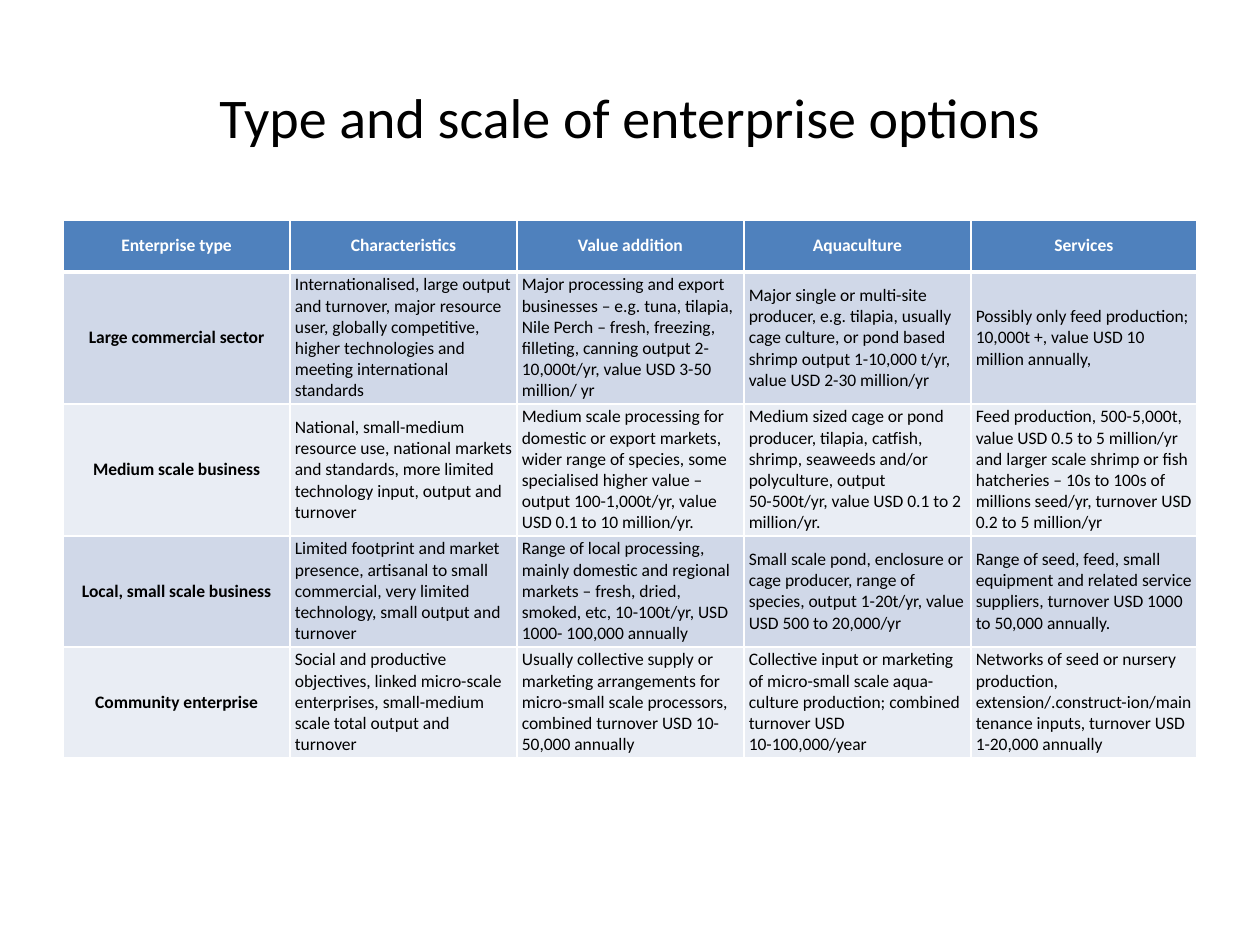
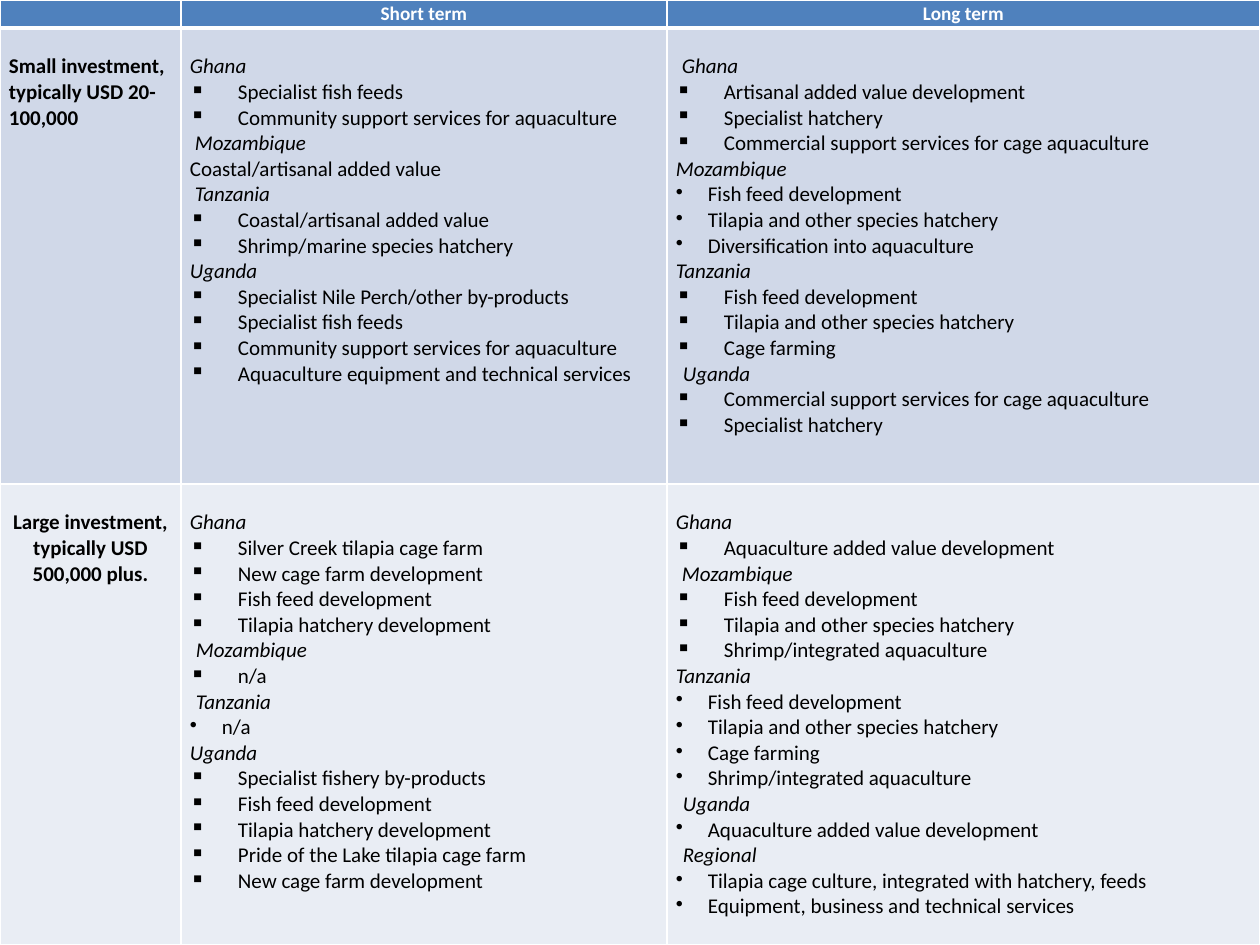
from lxml.etree import SubElement
from pptx import Presentation
from pptx.dml.color import RGBColor
from pptx.enum.text import MSO_ANCHOR as Anchor, PP_ALIGN as Align
from pptx.oxml.ns import qn
from pptx.util import Emu, Pt

PX = 914400 // 126
FONT = "Calibri"
BLACK = RGBColor(0x00, 0x00, 0x00)
WHITE = RGBColor(0xFF, 0xFF, 0xFF)
HEADER_BLUE = RGBColor(0x4F, 0x81, 0xBD)
BANDS = [RGBColor(0xD0, 0xD8, 0xE8), RGBColor(0xE9, 0xED, 0xF4)]

TITLE = "Type and scale of enterprise options"
ENTERPRISE_ROWS = [
    ["Enterprise type", "Characteristics", "Value addition", "Aquaculture", "Services"],
    ["Large commercial sector",
     "Internationalised, large output and turnover, major resource user, globally competitive, "
     "higher technologies and meeting international standards",
     "Major processing and export businesses – e.g. tuna, tilapia, Nile Perch – fresh, freezing, "
     "filleting, canning output 2-10,000t/yr, value USD 3-50 million/ yr",
     "Major single or multi-site producer, e.g. tilapia, usually cage culture, or pond based "
     "shrimp output 1-10,000 t/yr, value USD 2-30 million/yr",
     "Possibly only feed production; 10,000t +, value USD 10 million annually,"],
    ["Medium scale business",
     "National, small-medium resource use, national markets and standards, more limited "
     "technology input, output and turnover",
     "Medium scale processing for domestic or export markets, wider range of species, some "
     "specialised higher value – output 100-1,000t/yr, value USD 0.1 to 10 million/yr.",
     "Medium sized cage or pond producer, tilapia, catfish, shrimp, seaweeds and/or "
     "polyculture, output 50-500t/yr, value USD 0.1 to 2 million/yr.",
     "Feed production, 500-5,000t, value USD 0.5 to 5 million/yr and larger scale shrimp or fish "
     "hatcheries – 10s to 100s of millions seed/yr, turnover USD 0.2 to 5 million/yr"],
    ["Local, small scale business",
     "Limited footprint and market presence, artisanal to small commercial, very limited "
     "technology, small output and turnover",
     "Range of local processing, mainly domestic and regional markets – fresh, dried, smoked, "
     "etc, 10-100t/yr, USD 1000- 100,000 annually",
     "Small scale pond, enclosure or cage producer, range of species, output 1-20t/yr, value "
     "USD 500 to 20,000/yr",
     "Range of seed, feed, small equipment and related service suppliers, turnover USD 1000 to "
     "50,000 annually."],
    ["Community enterprise",
     "Social and productive objectives, linked micro-scale enterprises, small-medium scale "
     "total output and turnover",
     "Usually collective supply or marketing arrangements for micro-small scale processors, "
     "combined turnover USD 10-50,000 annually",
     "Collective input or marketing of micro-small scale aqua-culture production; combined "
     "turnover USD 10-100,000/year",
     "Networks of seed or nursery production, extension/.construct-ion/maintenance inputs, "
     "turnover USD 1-20,000 annually"],
]
ENTERPRISE_HEIGHTS = [52, 132, 132, 111, 111]

SQUARE, DOT, PLAIN = "▪", "•", ""
HANGS = {SQUARE: 48, DOT: 32, PLAIN: 0}
TERMS = ["", "Short term", "Long term"]
INVESTMENTS = [
    ("Small investment, typically USD 20-100,000", Align.LEFT, [
        [("Ghana", 0, SQUARE, ["Specialist fish feeds",
                               "Community support services for aquaculture"]),
         ("Mozambique", 5, PLAIN, ["Coastal/artisanal added value"]),
         ("Tanzania", 5, SQUARE, ["Coastal/artisanal added value",
                                  "Shrimp/marine species hatchery"]),
         ("Uganda", 0, SQUARE, ["Specialist Nile Perch/other by-products",
                                "Specialist fish feeds",
                                "Community support services for aquaculture",
                                "Aquaculture equipment and technical services"])],
        [("Ghana", 6, SQUARE, ["Artisanal added value development",
                               "Specialist hatchery",
                               "Commercial support services for cage aquaculture"]),
         ("Mozambique", 0, DOT, ["Fish feed development",
                                 "Tilapia and other species hatchery",
                                 "Diversification into aquaculture"]),
         ("Tanzania", 0, SQUARE, ["Fish feed development",
                                  "Tilapia and other species hatchery",
                                  "Cage farming"]),
         ("Uganda", 7, SQUARE, ["Commercial support services for cage aquaculture",
                                "Specialist hatchery"])],
    ]),
    ("Large investment, typically USD 500,000 plus.", Align.CENTER, [
        [("Ghana", 0, SQUARE, ["Silver Creek tilapia cage farm",
                               "New cage farm development",
                               "Fish feed development",
                               "Tilapia hatchery development"]),
         ("Mozambique", 6, SQUARE, ["n/a"]),
         ("Tanzania", 6, DOT, ["n/a"]),
         ("Uganda", 0, SQUARE, ["Specialist fishery by-products",
                                "Fish feed development",
                                "Tilapia hatchery development",
                                "Pride of the Lake tilapia cage farm",
                                "New cage farm development"])],
        [("Ghana", 0, SQUARE, ["Aquaculture added value development"]),
         ("Mozambique", 6, SQUARE, ["Fish feed development",
                                    "Tilapia and other species hatchery",
                                    "Shrimp/integrated aquaculture"]),
         ("Tanzania", 0, DOT, ["Fish feed development",
                               "Tilapia and other species hatchery",
                               "Cage farming",
                               "Shrimp/integrated aquaculture"]),
         ("Uganda", 7, DOT, ["Aquaculture added value development"]),
         ("Regional", 7, DOT, ["Tilapia cage culture, integrated with hatchery, feeds",
                               "Equipment, business and technical services"])],
    ]),
]
INVESTMENT_WIDTHS = [181, 486, 593]
INVESTMENT_HEIGHTS = [28, 456, 461]
LINE = 26


def px(length):
    return Emu(length * PX)


def write(frame, text, size=12, color=BLACK, bold=False, italic=False,
          align=Align.LEFT, left=0, bullet="", first=True):
    para = frame.paragraphs[0] if first else frame.add_paragraph()
    para.alignment = align
    if not text:
        SubElement(para._p, qn("a:endParaRPr"), sz=str(size * 100))
        return
    hang = HANGS[bullet]
    properties = para._p.get_or_add_pPr()
    properties.set("marL", str(px(left + hang)))
    properties.set("indent", str(px(-hang)))
    if bullet:
        SubElement(properties, qn("a:buChar"), char=bullet)
    span = para.add_run()
    span.text = text
    font = span.font
    font.name, font.size, font.bold, font.italic = FONT, Pt(size), bold, italic
    font.color.rgb = color


def style_cell(cell, row, margins, anchor):
    side, top, bottom = margins
    cell.margin_left = cell.margin_right = px(side)
    cell.margin_top, cell.margin_bottom = px(top), px(bottom)
    cell.vertical_anchor = anchor
    properties = cell._tc.get_or_add_tcPr()
    thick = {(0, "lnB"), (1, "lnT")}
    for edge in ("lnL", "lnR", "lnT", "lnB"):
        width = Pt(3 if (row, edge) in thick else 1)
        line = SubElement(properties, qn(f"a:{edge}"), w=str(width))
        fill = SubElement(line, qn("a:solidFill"))
        SubElement(fill, qn("a:srgbClr"), val=str(WHITE))
    cell.fill.solid()
    cell.fill.fore_color.rgb = BANDS[(row - 1) % 2] if row else HEADER_BLUE


def add_grid(slide, left, top, widths, heights):
    table = slide.shapes.add_table(
        len(heights), len(widths), px(left), px(top), px(sum(widths)), px(sum(heights))).table
    for column, width in zip(table.columns, widths):
        column.width = px(width)
    for row, height in zip(table.rows, heights):
        row.height = px(height)
    return table


def add_enterprise_slide(deck):
    slide = deck.slides.add_slide(deck.slide_layouts[6])
    box = slide.shapes.add_textbox(px(63), px(38), px(1134), px(157))
    box.text_frame.word_wrap = True
    box.text_frame.vertical_anchor = Anchor.MIDDLE
    write(box.text_frame, TITLE, size=32, align=Align.CENTER)
    columns = len(ENTERPRISE_ROWS[0])
    table = add_grid(slide, 63, 220, [1134 / columns] * columns, ENTERPRISE_HEIGHTS) \
        if 1134 % columns == 0 else \
        add_grid(slide, 63, 220, [227] * (columns - 1) + [226], ENTERPRISE_HEIGHTS)
    for row, texts in enumerate(ENTERPRISE_ROWS):
        for column, text in enumerate(texts):
            cell = table.cell(row, column)
            style_cell(cell, row, (5, 2, 2), Anchor.MIDDLE)
            label = row == 0 or column == 0
            write(cell.text_frame, text, size=10, bold=label,
                  color=BLACK if row else WHITE,
                  align=Align.CENTER if label else Align.LEFT)


def write_countries(frame, countries):
    for index, (country, left, bullet, options) in enumerate(countries):
        write(frame, country, italic=True, left=left, first=index == 0)
        for option in options:
            write(frame, option, bullet=bullet, first=False)


def add_investment_slide(deck):
    slide = deck.slides.add_slide(deck.slide_layouts[6])
    table = add_grid(slide, 0, 0, INVESTMENT_WIDTHS, INVESTMENT_HEIGHTS)
    for column, term in enumerate(TERMS):
        cell = table.cell(0, column)
        style_cell(cell, 0, (9, 0, 0), Anchor.MIDDLE)
        write(cell.text_frame, term, size=11, color=WHITE, bold=True, align=Align.CENTER)
    for row, (label, align, terms) in enumerate(INVESTMENTS, 1):
        for column in range(len(TERMS)):
            style_cell(table.cell(row, column), row, (9, LINE, 0), Anchor.TOP)
        write(table.cell(row, 0).text_frame, label, bold=True, align=align)
        for column, countries in enumerate(terms, 1):
            write_countries(table.cell(row, column).text_frame, countries)


def main():
    deck = Presentation()
    deck.slide_width, deck.slide_height = px(1260), px(945)
    add_enterprise_slide(deck)
    add_investment_slide(deck)
    deck.save("out.pptx")


if __name__ == "__main__":
    main()
